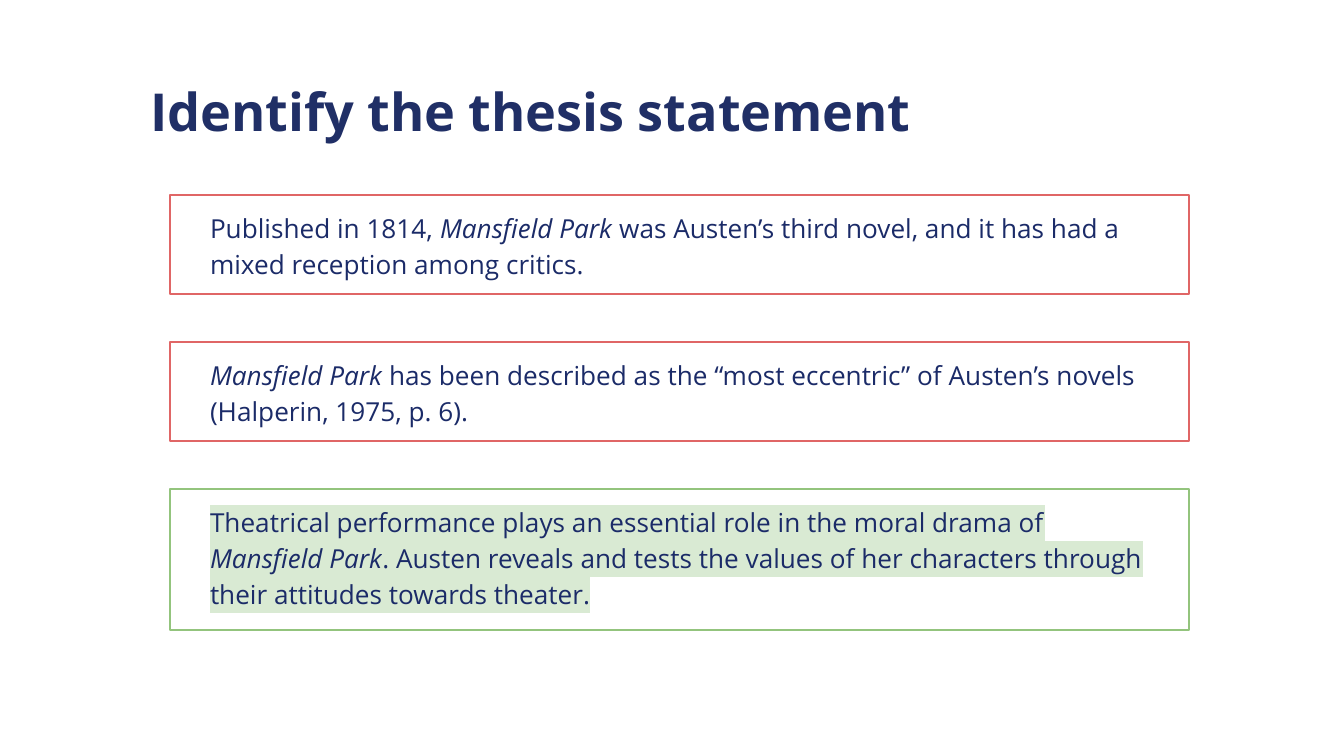
from lxml import etree
from pptx import Presentation
from pptx.dml.color import RGBColor
from pptx.enum.text import MSO_ANCHOR, MSO_AUTO_SIZE, PP_ALIGN
from pptx.oxml.ns import qn
from pptx.util import Pt

TOP = MSO_ANCHOR.TOP
NO_FIT = MSO_AUTO_SIZE.NONE
LEFT = PP_ALIGN.LEFT

SCALE = 914400 / 134.4
FONT = "Open Sans"
TITLE_INK, TEXT_INK = "202F66", "1B2B68"
RED, GREEN, PALE_GREEN = "E06666", "93C47D", "D9EAD3"
COMPARISON_LAYOUT = 4
NOVEL = "Mansfield Park"

STATEMENTS = [
    (1, 195, 99, RED, None, [
        ("Published in 1814, ", False),
        (NOVEL + " ", True),
        ("was Austen’s third novel, and it has had a mixed reception among critics.", False)]),
    (2, 342, 99, RED, None, [
        (NOVEL + " ", True),
        ("has been described as the “most eccentric” of Austen’s novels "
         "(Halperin, 1975, p. 6).", False)]),
    (4, 489, 141, GREEN, PALE_GREEN, [
        ("Theatrical performance plays an essential role in the moral drama of ", False),
        (NOVEL, True),
        (". Austen reveals and tests the values of her characters "
         "through their attitudes towards theater.", False)]),
]


def px(length):
    """Turn pixels into EMU."""
    return round(length * SCALE)


def color(value):
    """Turn a hex string into a colour."""
    return RGBColor.from_string(value)


def place(box, bounds, right_inset, line_spacing):
    """Move a placeholder and prepare its first paragraph."""
    box.left, box.top, box.width, box.height = map(px, bounds)
    frame = box.text_frame
    frame.word_wrap = True
    frame.auto_size = NO_FIT
    frame.vertical_anchor = TOP
    frame.margin_left = frame.margin_top = frame.margin_bottom = px(13)
    frame.margin_right = px(right_inset)
    para = frame.paragraphs[0]
    para.alignment = LEFT
    para.line_spacing = line_spacing
    para.space_before = Pt(0)
    return para


def add_span(para, text, size, ink, bold=False, italic=False, highlight=None):
    """Add one formatted run, with an optional highlight."""
    span = para.add_run()
    span.text = text
    font = span.font
    font.size, font.bold, font.italic = Pt(size), bold, italic
    font.color.rgb = color(ink)
    if highlight:
        mark = etree.Element(qn("a:highlight"))
        etree.SubElement(mark, qn("a:srgbClr"), val=highlight)
        span._r.rPr.find(qn("a:solidFill")).addnext(mark)
    font.name = FONT


def add_title(box, bounds):
    """Write the heading."""
    para = place(box, bounds, 13, 1.0)
    add_span(para, "Identify the thesis statement", 28, TITLE_INK, bold=True)


def add_statement(box, bounds, outline, highlight, spans):
    """Write one outlined statement."""
    para = place(box, bounds, 32, 1.15)
    box.line.color.rgb = color(outline)
    box.line.width = Pt(0.75)
    properties = para._p.get_or_add_pPr()
    properties.set("marL", str(px(27)))
    properties.set("indent", "0")
    etree.SubElement(properties, qn("a:buNone"))
    for text, italic in spans:
        add_span(para, text, 14, TEXT_INK, italic=italic, highlight=highlight)


def main():
    """Build and save the deck."""
    deck = Presentation()
    deck.slide_width, deck.slide_height = px(1344), px(756)
    page = deck.slides.add_slide(deck.slide_layouts[COMPARISON_LAYOUT])
    boxes = {box.placeholder_format.idx: box for box in page.placeholders}
    add_title(boxes.pop(0), (137, 66, 1058, 85))
    for index, top, height, outline, highlight, spans in STATEMENTS:
        bounds = (170, top, 1019, height)
        add_statement(boxes.pop(index), bounds, outline, highlight, spans)
    for box in boxes.values():
        box.element.getparent().remove(box.element)
    deck.save("out.pptx")


if __name__ == "__main__":
    main()
